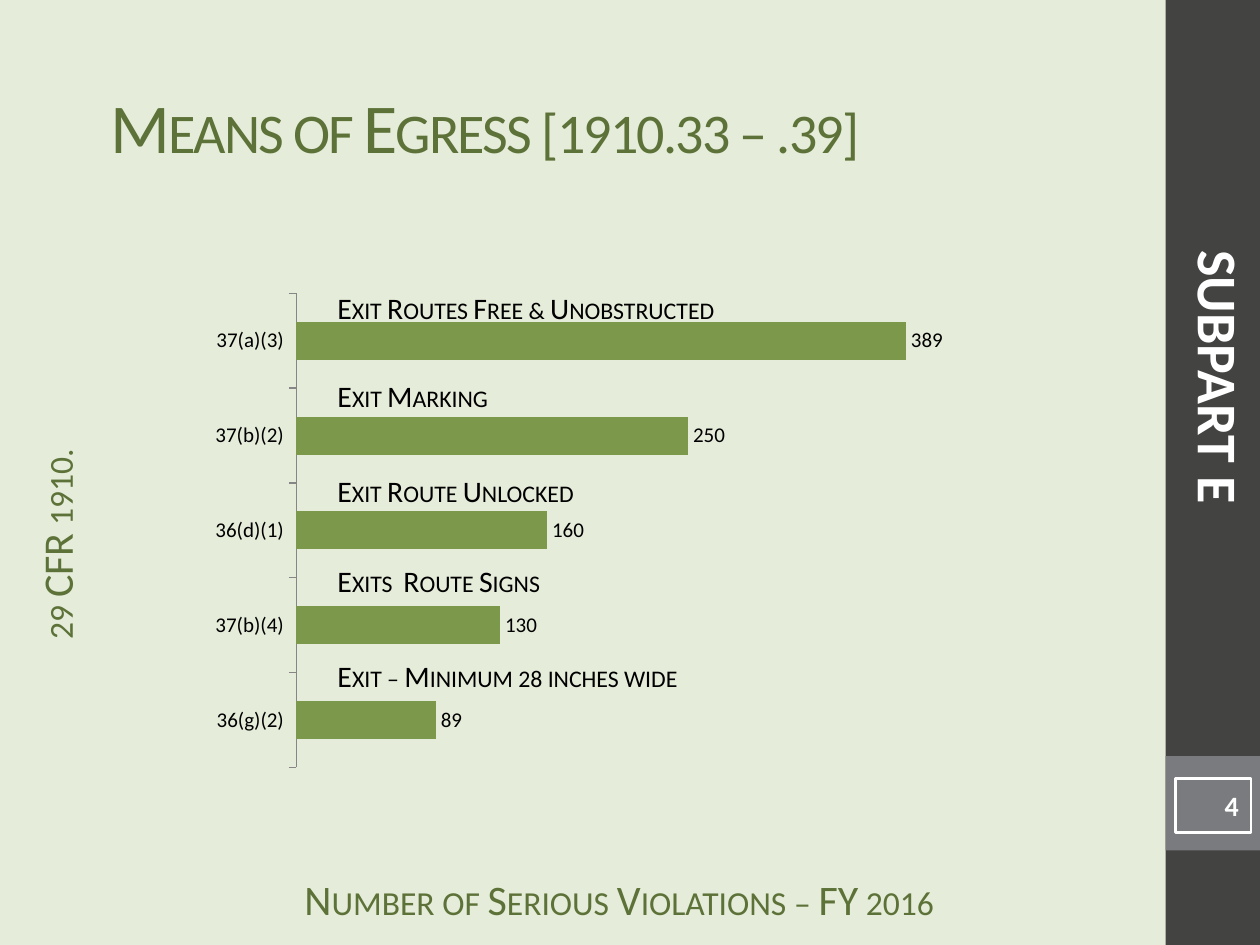
from pptx import Presentation
from pptx.chart.data import CategoryChartData
from pptx.dml.color import RGBColor
from pptx.enum.chart import XL_CHART_TYPE, XL_LABEL_POSITION, XL_TICK_MARK
from pptx.enum.shapes import MSO_SHAPE
from pptx.enum.text import MSO_ANCHOR, PP_ALIGN
from pptx.util import Inches, Pt

BAR = XL_CHART_TYPE.BAR_CLUSTERED
OUT_END = XL_LABEL_POSITION.OUTSIDE_END
OUT, NO_TICK = XL_TICK_MARK.OUTSIDE, XL_TICK_MARK.NONE
RECT = MSO_SHAPE.RECTANGLE
TOP, MIDDLE = MSO_ANCHOR.TOP, MSO_ANCHOR.MIDDLE
LEFT, CENTER, RIGHT = PP_ALIGN.LEFT, PP_ALIGN.CENTER, PP_ALIGN.RIGHT

FACE = "Calibri"
GREEN, WHITE, BLACK = "5D7238", "FFFFFF", "000000"

# Section, violations, label text, label top, label width
ROWS = [
    ("36(g)(2)", 89, "Exit – Minimum 28 inches wide", 5.17, 3.58),
    ("37(b)(4)", 130, "Exits  Route Signs", 4.42, 3.58),
    ("36(d)(1)", 160, "Exit Route Unlocked", 3.7, 2.14),
    ("37(b)(2)", 250, "Exit Marking", 2.95, 1.41),
    ("37(a)(3)", 389, "Exit Routes Free & Unobstructed", 2.25, 4),
]


def color(code):
    return RGBColor.from_string(code)


def place(box):
    return [Inches(n) for n in box]


def style(font, size, code, bold=False):
    font.name = FACE
    font.size = Pt(size)
    font.bold = bold
    font.color.rgb = color(code)


def write(shape, text, size, code, align=LEFT, anchor=TOP, bold=False):
    frame = shape.text_frame
    frame.word_wrap = True
    frame.vertical_anchor = anchor
    para = frame.paragraphs[0]
    para.text = text
    para.alignment = align
    style(para.font, size, code, bold)


def add_text(slide, box, text, size, code, turn=0, **look):
    shape = slide.shapes.add_textbox(*place(box))
    shape.rotation = turn
    write(shape, text, size, code, **look)
    return shape


def set_caps(shape, space=0):
    """Use small capitals, with letter spacing in points."""
    props = shape.text_frame.paragraphs[0]._p.pPr.get_or_add_defRPr()
    props.set("cap", "small")
    if space:
        props.set("spc", str(space * 100))


def add_note(slide, box, text, turn=0):
    """Add a chart caption in green small capitals."""
    shape = add_text(slide, box, text, 24, GREEN, turn, align=CENTER)
    shape.text_frame.margin_top = 0
    set_caps(shape)


def add_rect(slide, box, fill=None, line=None):
    shape = slide.shapes.add_shape(RECT, *place(box))
    shape.shadow.inherit = False
    if fill:
        shape.fill.solid()
        shape.fill.fore_color.rgb = color(fill)
    else:
        shape.fill.background()
    if line:
        shape.line.color.rgb = color(line)
        shape.line.width = Pt(1.5)
    else:
        shape.line.fill.background()
    return shape


def add_bars(slide, box):
    data = CategoryChartData()
    data.categories = [row[0] for row in ROWS]
    data.add_series("Series 1", [row[1] for row in ROWS])
    chart = slide.shapes.add_chart(BAR, *place(box), data).chart
    style(chart.font, 10, BLACK)
    chart.has_legend = False
    chart.has_title = False

    scale = chart.value_axis
    scale.visible = False
    scale.has_major_gridlines = False
    scale.minimum_scale, scale.maximum_scale = 0, 450
    axis = chart.category_axis
    axis.major_tick_mark, axis.minor_tick_mark = OUT, NO_TICK
    axis.format.line.color.rgb = color("868686")
    style(axis.tick_labels.font, 12, BLACK)

    plot = chart.plots[0]
    plot.gap_width = 150
    plot.vary_by_categories = False
    fill = plot.series[0].format.fill
    fill.solid()
    fill.fore_color.rgb = color("7C984A")
    plot.has_data_labels = True
    labels = plot.data_labels
    labels.show_value = True
    labels.position = OUT_END
    style(labels.font, 12, BLACK)


def main():
    deck = Presentation()
    deck.slide_width, deck.slide_height = Inches(10), Inches(7.5)
    slide = deck.slides.add_slide(deck.slide_layouts[6])
    back = slide.background.fill
    back.solid()
    back.fore_color.rgb = color("E5ECD9")

    add_rect(slide, (9.25, 0, 0.75, 7.5), "434342")
    add_rect(slide, (9.25, 6, 0.75, 0.75), "797B7E")
    add_note(slide, (2.08, 6.93, 5.67, 0.33),
             "Number of Serious Violations – FY 2016")
    add_note(slide, (-1.56, 4.03, 4.19, 0.58), "29 CFR 1910.", turn=270)
    add_bars(slide, (1.58, 2.25, 6.5, 3.92))

    title = add_text(slide, (0.78, 0.25, 8.56, 1.5),
                     "Means of Egress [1910.33 – .39]", 40, GREEN,
                     anchor=MIDDLE)
    set_caps(title, space=-1)
    page = add_rect(slide, (9.33, 6.18, 0.6, 0.43), line=WHITE)
    write(page, "4", 16, WHITE, align=RIGHT, anchor=MIDDLE, bold=True)

    for _, _, text, top, width in reversed(ROWS):
        set_caps(add_text(slide, (2.58, top, width, 0.39), text, 17, BLACK))
    add_text(slide, (6.69, 2.67, 5.98, 0.64), "SUBPART E", 32, WHITE,
             turn=90, align=CENTER, bold=True)
    deck.save("out.pptx")


if __name__ == "__main__":
    main()
